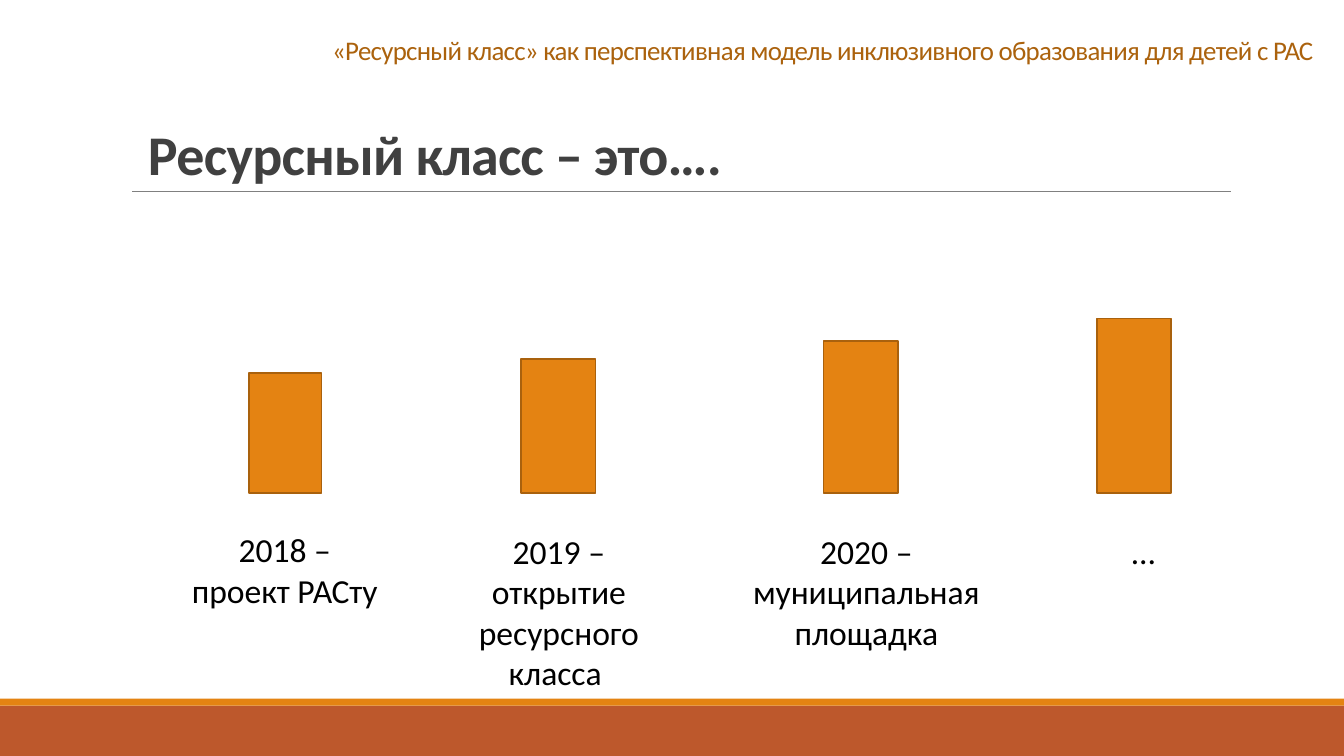
"""Build the slide on the growth of the resource class."""
from pptx import Presentation
from pptx.dml.color import RGBColor
from pptx.enum.shapes import MSO_CONNECTOR, MSO_SHAPE
from pptx.enum.text import MSO_ANCHOR, PP_ALIGN
from pptx.oxml.ns import qn
from pptx.util import Pt
from lxml.etree import SubElement

SLIDE_WIDTH, SLIDE_HEIGHT = 960, 540
ORANGE, BRICK, BAR_EDGE, RULE_GREY = "E48312", "BD582C", "A9610D", "808080"
FOOTER_HEIGHT, STRIPE_HEIGHT = 36, 5
BASELINE = 352.2
LINE_HEIGHT, LABEL_PADDING = 29.2, 7.2

HEADER = "«Ресурсный класс» как перспективная модель инклюзивного образования для детей с РАС"
TITLE = "Ресурсный класс – это…."
HEADER_BOX = (142.6, 15.8, 802.8, 33.8)
TITLE_BOX = (98.6, 34.6, 792, 102.2)
TITLE_RULE = (94.5, 136.8, 879, 136.8)
HEADER_FONT = {"size": Pt(19.2), "color": "AB620D"}
TITLE_FONT = {"size": Pt(40), "color": "404040", "bold": True}
LABEL_FONT = {"size": Pt(24), "color": "000000"}

STAGES = [
    {"bar": (177.8, 52, 85.7), "label": (112.3, 374.4, 182.2), "lines": 2,
     "text": ["2018 –", "проект РАСту"]},
    {"bar": (372.2, 53.3, 95.8), "label": (305.3, 375.8, 187.9), "lines": 4,
     "text": ["2019 –", "открытие ресурсного класса "]},
    {"bar": (588.2, 53.3, 108.5), "label": (524.9, 375.8, 187.9), "lines": 3,
     "text": ["2020 –", "муниципальная площадка"]},
    {"bar": (783.4, 53.3, 124.6), "label": (722.9, 375.8, 187.9), "lines": 1,
     "text": ["…"]},
]


def rgb(value):
    return RGBColor.from_string(value)


def add_block(slide, box, fill, edge=None):
    block = slide.shapes.add_shape(MSO_SHAPE.RECTANGLE, *map(Pt, box))
    block.shadow.inherit = False
    block.fill.solid()
    block.fill.fore_color.rgb = rgb(fill)
    if edge:
        block.line.color.rgb = rgb(edge)
        block.line.width = Pt(1.25)
    else:
        block.line.fill.background()


def add_text(slide, box, paragraphs, font, align, anchor=MSO_ANCHOR.TOP,
             line_spacing=None, tracking=None):
    frame = slide.shapes.add_textbox(*map(Pt, box)).text_frame
    frame.word_wrap = True
    frame.vertical_anchor = anchor
    for index, text in enumerate(paragraphs):
        paragraph = frame.add_paragraph() if index else frame.paragraphs[0]
        paragraph.alignment = align
        paragraph.line_spacing = line_spacing
        run = paragraph.add_run()
        run.text = text
        for key, value in {"name": "Calibri", **font}.items():
            if key == "color":
                run.font.color.rgb = rgb(value)
            else:
                setattr(run.font, key, value)
        if tracking:
            run.font._element.set("spc", str(tracking))


def add_rule(slide, ends):
    rule = slide.shapes.add_connector(MSO_CONNECTOR.STRAIGHT, *map(Pt, ends))
    rule.line.color.rgb = rgb(RULE_GREY)
    rule.line.width = Pt(0.5)
    SubElement(rule._element.spPr, qn("a:effectLst"))


def main():
    deck = Presentation()
    deck.slide_width, deck.slide_height = Pt(SLIDE_WIDTH), Pt(SLIDE_HEIGHT)
    slide = deck.slides.add_slide(deck.slide_layouts[6])

    footer_top = SLIDE_HEIGHT - FOOTER_HEIGHT
    add_block(slide, (0, footer_top, SLIDE_WIDTH, FOOTER_HEIGHT), BRICK)
    add_block(slide, (0, footer_top - STRIPE_HEIGHT, SLIDE_WIDTH, STRIPE_HEIGHT), ORANGE)
    add_rule(slide, TITLE_RULE)
    add_text(slide, HEADER_BOX, [HEADER], HEADER_FONT, PP_ALIGN.RIGHT,
             MSO_ANCHOR.BOTTOM, 0.65, -50)
    add_text(slide, TITLE_BOX, [TITLE], TITLE_FONT, PP_ALIGN.LEFT,
             MSO_ANCHOR.BOTTOM, 0.85, -50)

    for stage in STAGES:
        left, width, height = stage["bar"]
        add_block(slide, (left, BASELINE - height, width, height), ORANGE, BAR_EDGE)
        label_height = stage["lines"] * LINE_HEIGHT + LABEL_PADDING
        add_text(slide, (*stage["label"], label_height), stage["text"],
                 LABEL_FONT, PP_ALIGN.CENTER)

    deck.save("out.pptx")


if __name__ == "__main__":
    main()
